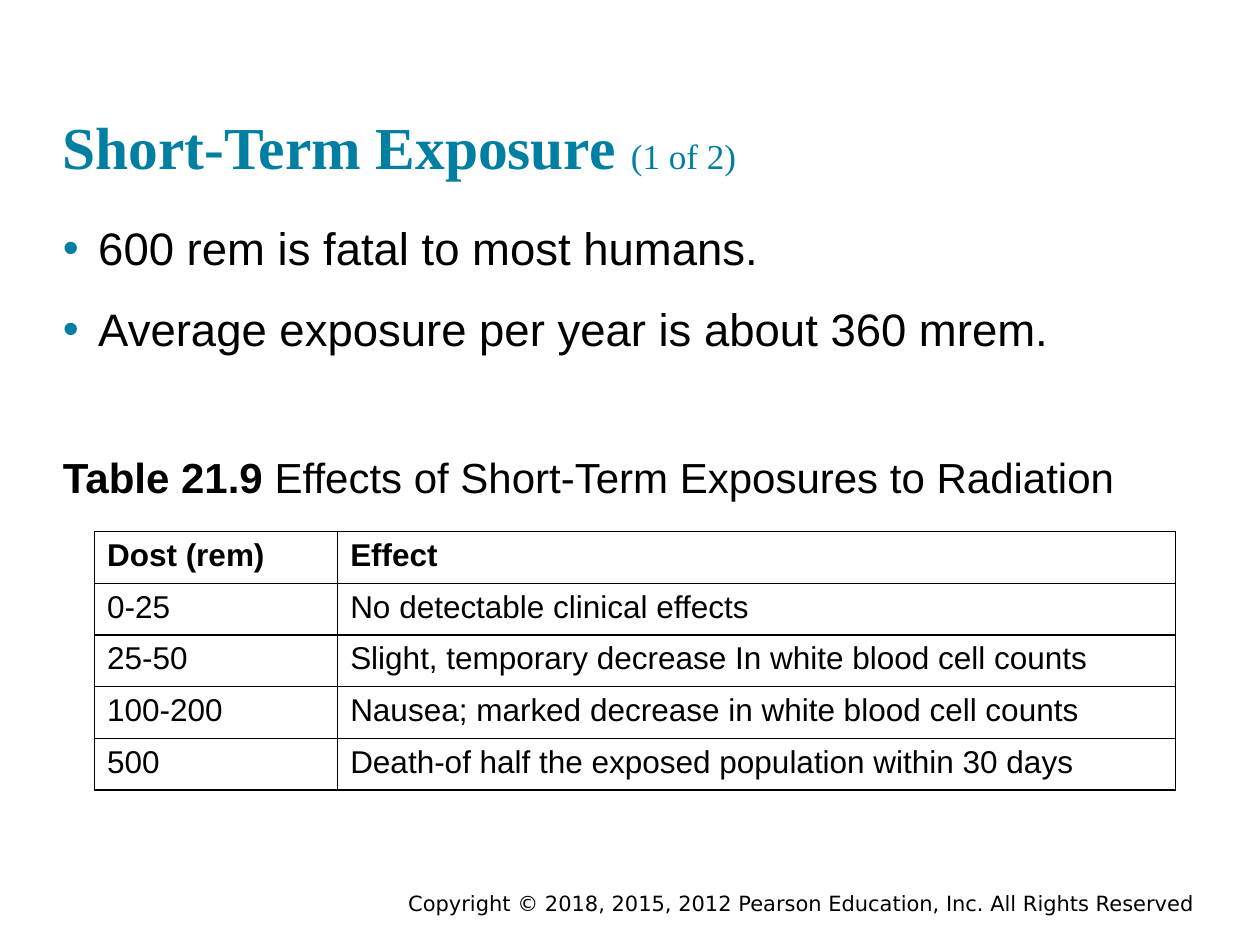
from lxml.etree import SubElement
from pptx import Presentation
from pptx.dml.color import RGBColor
from pptx.enum.text import MSO_ANCHOR, PP_ALIGN
from pptx.oxml.ns import qn
from pptx.util import Inches, Pt

TEAL = RGBColor(0x00, 0x7F, 0xA3)
BLACK = RGBColor(0, 0, 0)

TITLE = [("Short-Term Exposure ", 34, True), ("(1 of 2)", 20, False)]
BULLETS = [
    "600 rem is fatal to most humans.",
    "Average exposure per year is about 360 mrem.",
]
CAPTION = [
    ("Table 21.9", 24, True),
    (" Effects of Short-Term Exposures to Radiation", 24, False),
]
EXPOSURES = [
    ("Dost (rem)", "Effect"),
    ("0-25", "No detectable clinical effects"),
    ("25-50", "Slight, temporary decrease In white blood cell counts"),
    ("100-200", "Nausea; marked decrease in white blood cell counts"),
    ("500", "Death-of half the exposed population within 30 days"),
]
COPYRIGHT = "Copyright © 2018, 2015, 2012 Pearson Education, Inc. All Rights Reserved"

MARGIN, CONTENT_WIDTH = 0.5, 9
TABLE_LEFT, TABLE_TOP = 0.75, 4.22
COLUMN_WIDTHS = (1.93, 6.65)
ROW_HEIGHT = 0.41
BULLET_INDENT = Inches(0.28)


def add_text_frame(slide, left, top, width, height, inset=0):
    box = slide.shapes.add_textbox(*map(Inches, (left, top, width, height)))
    frame = box.text_frame
    frame.word_wrap = True
    frame.margin_left = frame.margin_right = Inches(inset)
    frame.margin_top = frame.margin_bottom = Inches(inset / 2)
    return frame


def set_font(font, name, color, size=None, bold=None):
    font.name = name
    font.color.rgb = color
    if size:
        font.size = Pt(size)
    font.bold = bold


def add_runs(paragraph, runs, name, color):
    set_font(paragraph.font, name, color)
    for text, size, bold in runs:
        run = paragraph.add_run()
        run.text = text
        set_font(run.font, name, color, size, bold)


def add_bullet(paragraph):
    properties = paragraph._p.get_or_add_pPr()
    properties.set("marL", str(BULLET_INDENT))
    properties.set("indent", str(-BULLET_INDENT))
    color = SubElement(properties, qn("a:buClr"))
    SubElement(color, qn("a:srgbClr"), val=str(TEAL))
    SubElement(properties, qn("a:buFont"), typeface="Arial")
    SubElement(properties, qn("a:buChar"), char="•")


def add_borders(cell):
    properties = cell._tc.get_or_add_tcPr()
    for side in ("lnL", "lnR", "lnT", "lnB"):
        line = SubElement(properties, qn(f"a:{side}"), w=str(Pt(1)))
        fill = SubElement(line, qn("a:solidFill"))
        SubElement(fill, qn("a:srgbClr"), val=str(BLACK))


def add_exposure_table(slide):
    table = slide.shapes.add_table(
        len(EXPOSURES), len(COLUMN_WIDTHS), Inches(TABLE_LEFT), Inches(TABLE_TOP),
        Inches(sum(COLUMN_WIDTHS)), Inches(ROW_HEIGHT * len(EXPOSURES)),
    ).table
    table.horz_banding = False
    for column, width in zip(table.columns, COLUMN_WIDTHS):
        column.width = Inches(width)
    for row_index, texts in enumerate(EXPOSURES):
        for column_index, text in enumerate(texts):
            cell = table.cell(row_index, column_index)
            cell.text = text
            add_borders(cell)
            cell.fill.background()
            set_font(cell.text_frame.paragraphs[0].font, "Arial", BLACK, 18,
                     row_index == 0)


def main():
    presentation = Presentation()
    presentation.slide_width, presentation.slide_height = Inches(10), Inches(7.5)
    slide = presentation.slides.add_slide(presentation.slide_layouts[6])

    title = add_text_frame(slide, MARGIN, 0.24, CONTENT_WIDTH, 1.2)
    title.vertical_anchor = MSO_ANCHOR.BOTTOM
    add_runs(title.paragraphs[0], TITLE, "Times New Roman", TEAL)

    body = add_text_frame(slide, MARGIN, 1.75, CONTENT_WIDTH, 1.16)
    for index, text in enumerate(BULLETS):
        paragraph = body.add_paragraph() if index else body.paragraphs[0]
        paragraph.text = text
        if index:
            paragraph.space_before = Pt(15)
        add_bullet(paragraph)
        set_font(paragraph.font, "Arial", BLACK, 26)

    caption = add_text_frame(slide, MARGIN, 3.58, CONTENT_WIDTH, 0.5)
    add_runs(caption.paragraphs[0], CAPTION, "Arial", BLACK)

    add_exposure_table(slide)

    footer = add_text_frame(slide, 1.75, 7.02, 7.83, 0.3, inset=0.1).paragraphs[0]
    footer.text = COPYRIGHT
    footer.alignment = PP_ALIGN.RIGHT
    set_font(footer.font, "DejaVu Sans", BLACK, 12)

    presentation.save("out.pptx")


if __name__ == "__main__":
    main()
